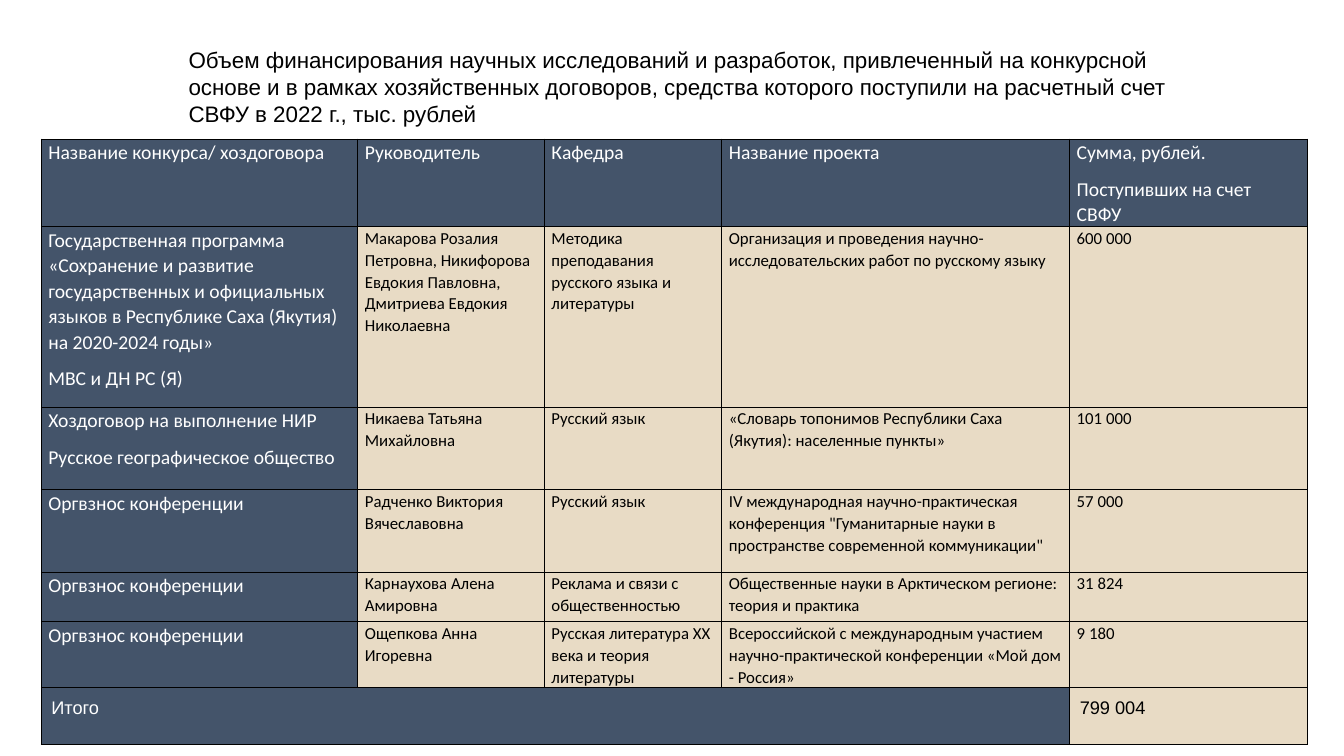
from lxml import etree
from pptx import Presentation
from pptx.dml.color import RGBColor
from pptx.enum.text import MSO_ANCHOR, MSO_AUTO_SIZE, PP_ALIGN
from pptx.oxml.ns import qn
from pptx.util import Inches, Pt

TOP = MSO_ANCHOR.TOP
NO_FIT = MSO_AUTO_SIZE.NONE
LEFT = PP_ALIGN.LEFT
TITLE_ONLY = 5

BLACK = RGBColor(0x00, 0x00, 0x00)
WHITE = RGBColor(0xFF, 0xFF, 0xFF)
SLATE = RGBColor(0x44, 0x54, 0x6A)
SAND = RGBColor(0xE8, 0xDB, 0xC5)

TITLE = (
    "Объем финансирования научных исследований и разработок, привлеченный на конкурсной "
    "основе и в рамках хозяйственных договоров, средства которого поступили на расчетный "
    "счет СВФУ в 2022 г., тыс. рублей"
)
COLUMN_WIDTHS = [3.14, 1.85, 1.76, 3.45, 2.36]
ROW_HEIGHTS = [0.82, 1.79, 0.82, 0.82, 0.49, 0.61, 0.56]
FUNDING = [
    ["Название конкурса/ хоздоговора", "Руководитель", "Кафедра", "Название проекта",
     "Сумма, рублей.\nПоступивших на счет СВФУ"],
    ["Государственная программа «Сохранение и развитие государственных и официальных языков "
     "в Республике Саха (Якутия) на 2020-2024 годы»\nМВС и ДН РС (Я)",
     "Макарова Розалия Петровна, Никифорова Евдокия Павловна, Дмитриева Евдокия Николаевна",
     "Методика преподавания русского языка и литературы",
     "Организация и проведения научно-исследовательских работ по русскому языку",
     "600 000"],
    ["Хоздоговор на выполнение НИР\nРусское географическое общество",
     "Никаева Татьяна Михайловна", "Русский язык",
     "«Словарь топонимов Республики Саха (Якутия): населенные пункты»", "101 000"],
    ["Оргвзнос конференции", "Радченко Виктория Вячеславовна", "Русский язык",
     "IV международная научно-практическая конференция \"Гуманитарные науки в пространстве "
     "современной коммуникации\"", "57 000"],
    ["Оргвзнос конференции", "Карнаухова Алена Амировна",
     "Реклама и связи с общественностью",
     "Общественные науки в Арктическом регионе: теория и практика", "31 824"],
    ["Оргвзнос конференции", "Ощепкова Анна Игоревна",
     "Русская литература XX века и теория литературы",
     "Всероссийской с международным участием научно-практической конференции "
     "«Мой дом - Россия»", "9 180"],
    ["Итого", "", "", "", "799 004"],
]


class FundingPage:
    """Holds the table style and the current slide."""

    body_font = "Calibri"
    plain_font = "Arial"

    def __init__(self, deck):
        self.page = deck.slides.add_slide(deck.slide_layouts[TITLE_ONLY])

    def set_text(self, frame, text, font, size, color, spacing=1.0, after=0):
        frame.text = text
        frame.word_wrap = True
        for para in frame.paragraphs:
            para.alignment = LEFT
            para.line_spacing = spacing
            para.space_before = Pt(0)
            para.space_after = Pt(after)
            for span in para.runs:
                span.font.name = font
                span.font.size = Pt(size)
                span.font.color.rgb = color

    def title(self, text, left, top, width, height):
        box = self.page.shapes.title
        box.left, box.top = Inches(left), Inches(top)
        box.width, box.height = Inches(width), Inches(height)
        frame = box.text_frame
        frame.auto_size = NO_FIT
        frame.vertical_anchor = TOP
        self.set_text(frame, text, self.plain_font, 16, BLACK)

    def border(self, cell):
        properties = cell._tc.get_or_add_tcPr()
        for side in ("a:lnL", "a:lnR", "a:lnT", "a:lnB"):
            line = etree.SubElement(properties, qn(side), w=str(Pt(0.75)))
            fill = etree.SubElement(line, qn("a:solidFill"))
            etree.SubElement(fill, qn("a:srgbClr"), val=str(BLACK))

    def cell(self, cell, text, dark, total):
        side, edge = (0.1, 0.1) if total else (0.07, 0)
        cell.margin_left = cell.margin_right = Inches(side)
        cell.margin_top = cell.margin_bottom = Inches(edge)
        cell.vertical_anchor = TOP
        self.border(cell)
        cell.fill.solid()
        cell.fill.fore_color.rgb = SLATE if dark else SAND
        color = WHITE if dark else BLACK
        if total:
            self.set_text(cell.text_frame, text, self.plain_font, 13, color)
        else:
            size = 14 if dark else 12
            self.set_text(cell.text_frame, text, self.body_font, size, color, 1.07, 8)

    def table(self, rows, left, top, widths, heights):
        table = self.page.shapes.add_table(
            len(rows), len(widths), Inches(left), Inches(top),
            Inches(sum(widths)), Inches(sum(heights))).table
        table.first_row = table.horz_banding = False
        for column, width in zip(table.columns, widths):
            column.width = Inches(width)
        for row, height in zip(table.rows, heights):
            row.height = Inches(height)

        last_row, last_column = len(rows) - 1, len(widths) - 1
        for r, texts in enumerate(rows):
            for c, text in enumerate(texts):
                total = r == last_row
                dark = r == 0 or c == 0 or (total and c < last_column)
                self.cell(table.cell(r, c), text, dark, total)
        # The total label spans everything but the sum
        table.cell(last_row, 0).merge(table.cell(last_row, last_column - 1))


def main():
    deck = Presentation()
    deck.slide_width, deck.slide_height = Inches(13.33), Inches(7.5)
    page = FundingPage(deck)
    # Heading
    page.title(TITLE, 1.77, 0.41, 10.38, 0.91)
    # Funding table
    page.table(FUNDING, 0.41, 1.38, COLUMN_WIDTHS, ROW_HEIGHTS)
    deck.save("out.pptx")


if __name__ == "__main__":
    main()
